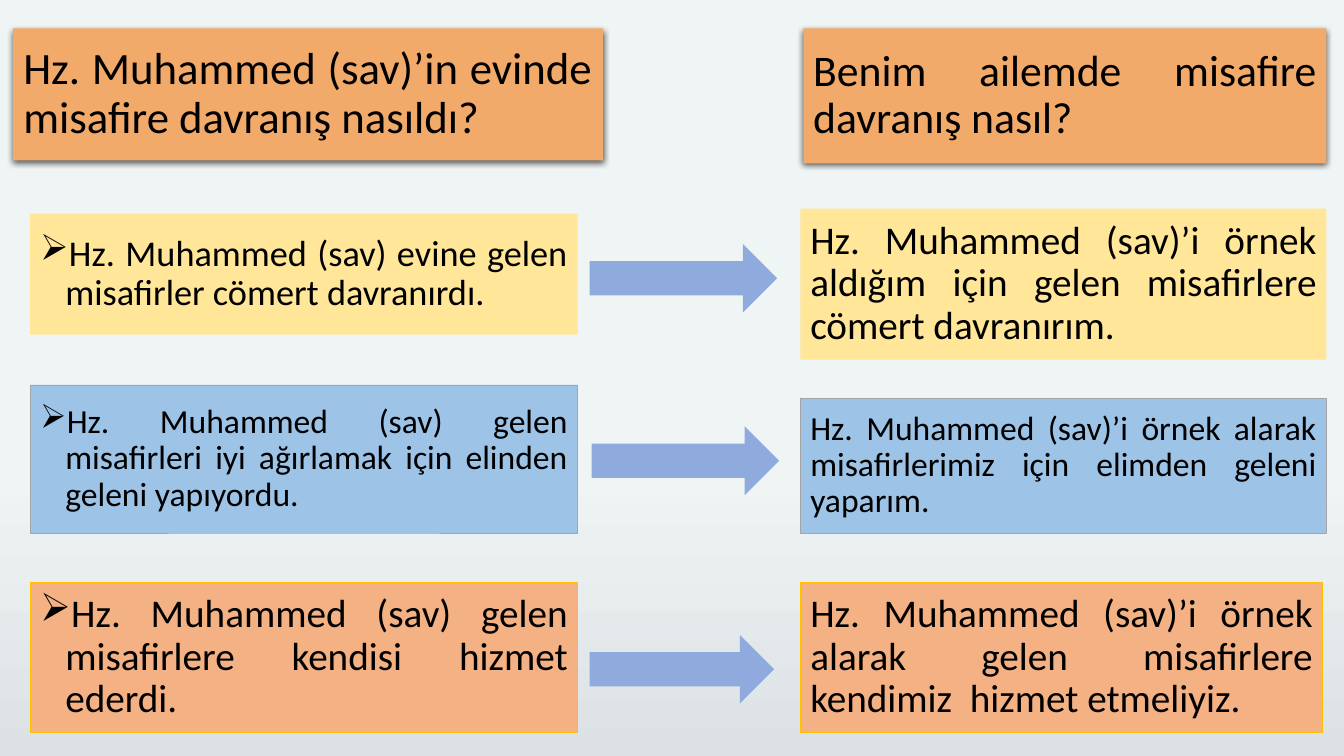
from lxml import etree
from pptx import Presentation
from pptx.dml.color import RGBColor
from pptx.enum.dml import MSO_FILL
from pptx.enum.shapes import MSO_SHAPE
from pptx.enum.text import MSO_ANCHOR, MSO_AUTO_SIZE, PP_ALIGN
from pptx.oxml.ns import qn
from pptx.util import Pt

RECTANGLE = MSO_SHAPE.RECTANGLE
RIGHT_ARROW = MSO_SHAPE.RIGHT_ARROW
MIDDLE = MSO_ANCHOR.MIDDLE
NO_AUTOFIT = MSO_AUTO_SIZE.NONE
JUSTIFY = PP_ALIGN.JUSTIFY
GRADIENT = MSO_FILL.GRADIENT

BLACK = RGBColor(0x00, 0x00, 0x00)
MIST = RGBColor(0xEF, 0xF4, 0xF5)
SILVER = RGBColor(0xDC, 0xE1, 0xE4)
ORANGE = RGBColor(0xF2, 0xAA, 0x6A)
YELLOW = RGBColor(0xFF, 0xE6, 0x99)
BLUE = RGBColor(0x9D, 0xC3, 0xE6)
PEACH = RGBColor(0xF4, 0xB1, 0x83)
GREY = RGBColor(0xA5, 0xA5, 0xA5)
GOLD = RGBColor(0xFF, 0xC0, 0x00)
ARROW_BLUE = RGBColor(0x8F, 0xAA, 0xDC)

LEFT_X, LEFT_WIDTH = 21.6, 391
RIGHT_X = 571.7


class HospitalitySlide:
    """Draws the slide's headings, statement boxes and arrows in one style."""

    font_name = "Calibri"
    line_spacing = 0.9
    hanging_indent = Pt(18)

    def __init__(self, slide):
        self.slide = slide

    def background(self, top_color, bottom_color):
        fill = self.slide.background.fill
        if fill.type != GRADIENT:
            fill.gradient()
        fill.gradient_angle = 270
        stops = zip(fill.gradient_stops, (0.62, 1), (top_color, bottom_color))
        for stop, position, color in stops:
            stop.position = position
            stop.color.rgb = color

    def title(self, text, box, size):
        heading = self.slide.shapes.title
        heading.left, heading.top, heading.width, heading.height = map(Pt, box)
        self._paint(heading, ORANGE)
        self._cast_shadow(heading)
        self._write(heading, text, size)

    def heading(self, text, box, size):
        heading = self._shape(RECTANGLE, box, ORANGE)
        self._cast_shadow(heading)
        self._write(heading, text, size)

    def statement(self, text, box, size, fill, outline, bullet=None):
        statement = self._shape(RECTANGLE, box, fill, outline)
        self._write(statement, text, size, space_before=10, bullet=bullet)

    def arrow(self, box):
        self._shape(RIGHT_ARROW, box, ARROW_BLUE)

    def _shape(self, preset, box, fill, outline=None):
        shape = self.slide.shapes.add_shape(preset, *map(Pt, box))
        self._paint(shape, fill, outline)
        return shape

    def _paint(self, shape, fill, outline=None):
        shape.fill.solid()
        shape.fill.fore_color.rgb = fill
        if outline is None:
            shape.line.fill.background()
        else:
            shape.line.color.rgb = outline
            shape.line.width = Pt(0.5)
        shape.shadow.inherit = False

    def _cast_shadow(self, shape):
        effects = shape._element.spPr.find(qn("a:effectLst"))
        shadow = etree.SubElement(
            effects, qn("a:outerShdw"), blurRad=str(Pt(4.5)), dist=str(Pt(1.5)),
            dir="5400000", algn="ctr", rotWithShape="0")
        color = etree.SubElement(shadow, qn("a:srgbClr"), val=str(BLACK))
        etree.SubElement(color, qn("a:alpha"), val="63000")

    def _write(self, shape, text, size, space_before=0, bullet=None):
        frame = shape.text_frame
        frame.word_wrap = True
        frame.auto_size = NO_AUTOFIT
        frame.vertical_anchor = MIDDLE
        frame.margin_left = frame.margin_right = Pt(7.2)
        frame.margin_top = frame.margin_bottom = Pt(3.6)
        frame.text = text
        paragraph = frame.paragraphs[0]
        paragraph.alignment = JUSTIFY
        paragraph.line_spacing = self.line_spacing
        paragraph.space_before = Pt(space_before)
        if bullet:
            self._add_bullet(paragraph, bullet)
        paragraph.font.name = self.font_name
        paragraph.font.size = Pt(size)
        paragraph.font.color.rgb = BLACK

    def _add_bullet(self, paragraph, bullet):
        properties = paragraph._p.get_or_add_pPr()
        properties.set("marL", str(self.hanging_indent))
        properties.set("indent", str(-self.hanging_indent))
        etree.SubElement(properties, qn("a:buChar"), char=bullet)


def main():
    presentation = Presentation()
    presentation.slide_width, presentation.slide_height = Pt(960), Pt(540)
    layout = presentation.slide_layouts.get_by_name("Title Only")
    page = HospitalitySlide(presentation.slides.add_slide(layout))

    page.background(MIST, SILVER)
    page.title("Hz. Muhammed (sav)’in evinde misafire davranış nasıldı?",
               (9.4, 20.2, 421.2, 94.3), 32)
    page.heading("Benim ailemde misafire davranış nasıl?",
                 (573.8, 20.2, 373.7, 96.5), 31.2)

    prophet_statements = [
        ("Hz. Muhammed (sav) evine gelen misafirler cömert davranırdı.",
         152.6, 86.4, 25.9),
        ("Hz. Muhammed (sav) gelen misafirleri iyi ağırlamak için elinden "
         "geleni yapıyordu.", 275, 105.8, 24),
        ("Hz. Muhammed (sav) gelen misafirlere kendisi hizmet ederdi.",
         416.2, 106.6, 28),
    ]
    family_statements = [
        ("Hz. Muhammed (sav)’i örnek aldığım için gelen misafirlere cömert "
         "davranırım.", 149, 375.8, 108, 28),
        ("Hz. Muhammed (sav)’i örnek alarak misafirlerimiz için elimden "
         "geleni yaparım.", 284.4, 375.8, 96.5, 24),
        ("Hz. Muhammed (sav)’i örnek alarak gelen misafirlere kendimiz  "
         "hizmet etmeliyiz.", 416.2, 373, 106.6, 28),
    ]
    arrows = [(421.2, 174.2, 133.9), (422.6, 304.6, 133.9), (421.2, 453.6, 131.8)]
    row_colors = [(YELLOW, None), (BLUE, GREY), (PEACH, GOLD)]

    rows = zip(prophet_statements, family_statements, arrows, row_colors)
    for prophet, family, (arrow_x, arrow_y, arrow_width), colors in rows:
        text, top, height, size = prophet
        page.statement(text, (LEFT_X, top, LEFT_WIDTH, height), size, *colors,
                       bullet="➢")
        text, top, width, height, size = family
        page.statement(text, (RIGHT_X, top, width, height), size, *colors)
        page.arrow((arrow_x, arrow_y, arrow_width, 49))

    presentation.save("out.pptx")


if __name__ == "__main__":
    main()
